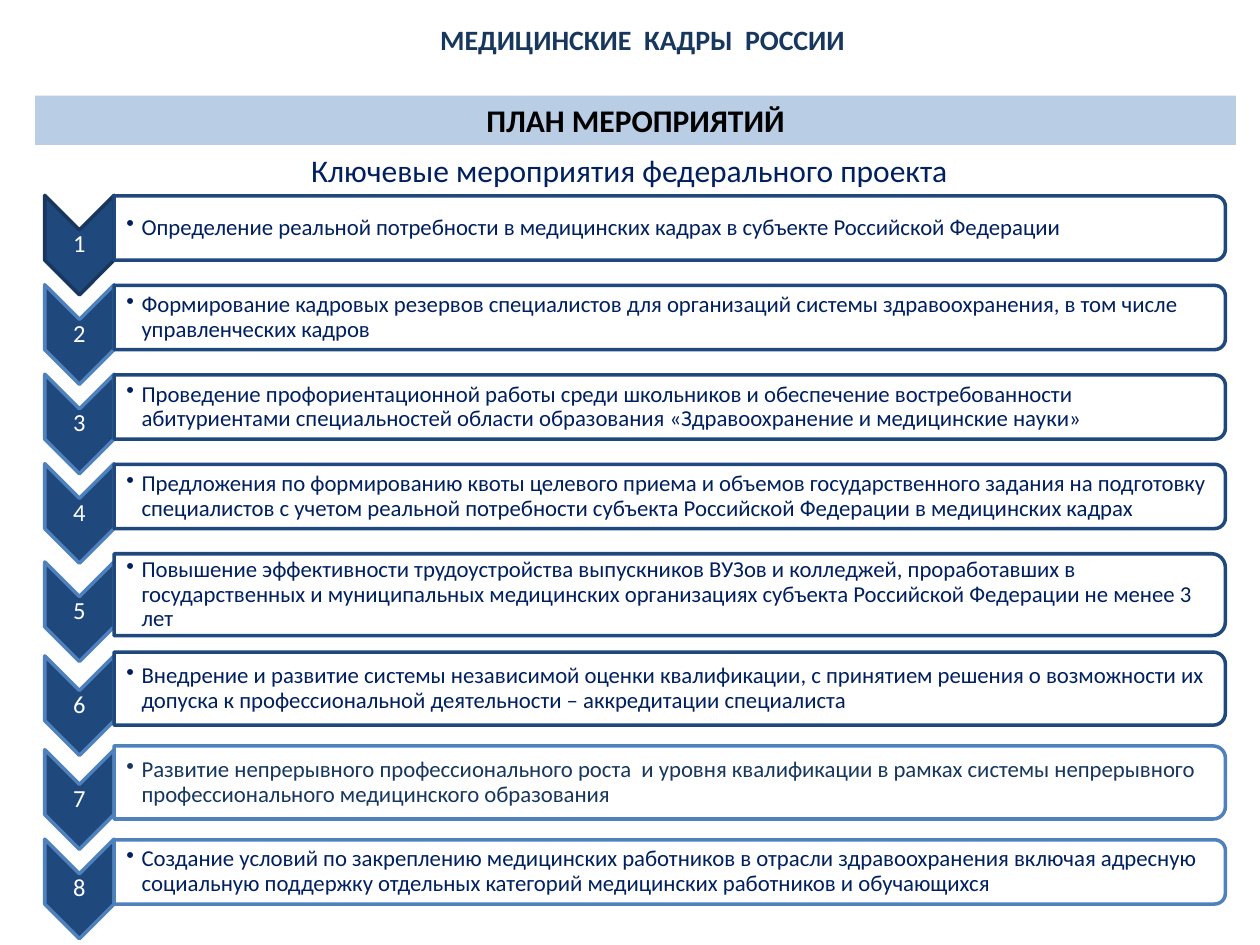
from dataclasses import dataclass

from lxml.etree import SubElement
from pptx import Presentation
from pptx.dml.color import RGBColor
from pptx.enum.shapes import MSO_SHAPE as Shape
from pptx.enum.text import MSO_ANCHOR as Anchor, PP_ALIGN as Align
from pptx.oxml.ns import qn
from pptx.util import Inches, Pt

SLIDE_WIDTH, SLIDE_HEIGHT = Inches(10), Inches(7.5)
COLUMNS, ROWS = 100, 75
NAVY, DARK, BLUE, INK = "1F497D", "17375E", "4F81BD", "002060"
BAND, WHITE, BLACK = "B9CDE5", "FFFFFF", "000000"

CHEVRON_LENGTH, CHEVRON_WIDTH = 7.9, 5.5
CHEVRON_DROP = 1.35
STEP_REACH = 4.55

STEPS = [
    ("Определение реальной потребности в медицинских кадрах в субъекте "
     "Российской Федерации", 5.1, DARK, NAVY, INK),
    ("Формирование кадровых резервов специалистов для организаций системы "
     "здравоохранения, в том числе управленческих кадров", 5.1, BLUE, NAVY, INK),
    ("Проведение профориентационной работы среди школьников и обеспечение "
     "востребованности абитуриентами специальностей области образования "
     "«Здравоохранение и медицинские науки»", 5.1, BLUE, NAVY, INK),
    ("Предложения по формированию квоты целевого приема и объемов "
     "государственного задания на подготовку специалистов с учетом реальной "
     "потребности субъекта Российской Федерации в медицинских кадрах",
     5.1, BLUE, NAVY, INK),
    ("Повышение эффективности трудоустройства выпускников ВУЗов и колледжей, "
     "проработавших в государственных и муниципальных медицинских организациях "
     "субъекта Российской Федерации не менее 3 лет", 6.5, BLUE, NAVY, INK),
    ("Внедрение и развитие системы независимой оценки квалификации, с принятием "
     "решения о возможности их допуска к профессиональной деятельности – "
     "аккредитации специалиста", 5.8, BLUE, NAVY, INK),
    ("Развитие непрерывного профессионального роста  и уровня квалификации в "
     "рамках системы непрерывного профессионального медицинского образования",
     5.8, BLUE, BLUE, DARK),
    ("Создание условий по закреплению медицинских работников в отрасли "
     "здравоохранения включая адресную социальную поддержку отдельных категорий "
     "медицинских работников и обучающихся", 5.1, BLUE, BLUE, INK),
]


@dataclass
class Box:
    left: float
    top: float
    width: float
    height: float

    def place(self):
        column, row = SLIDE_WIDTH / COLUMNS, SLIDE_HEIGHT / ROWS
        return (round(self.left * column), round(self.top * row),
                round(self.width * column), round(self.height * row))

    @property
    def center(self):
        return self.left + self.width / 2, self.top + self.height / 2


def centered(center, width, height):
    return Box(center[0] - width / 2, center[1] - height / 2, width, height)


def color(value):
    return RGBColor.from_string(value)


def add_shape(slide, kind, box, fill, line=None, rotation=0, opacity=None):
    shape = slide.shapes.add_shape(kind, *box.place())
    shape.shadow.inherit = False
    shape.rotation = rotation
    shape.fill.solid()
    shape.fill.fore_color.rgb = color(fill)
    if opacity is not None:
        fill_color = shape.element.spPr.find(f"{qn('a:solidFill')}/{qn('a:srgbClr')}")
        SubElement(fill_color, qn("a:alpha"), val=str(opacity * 1000))
    if line:
        shape.line.color.rgb = color(line)
        shape.line.width = Pt(2)
    else:
        shape.line.fill.background()
    return shape


def add_bullet(paragraph, indent):
    properties = paragraph._p.get_or_add_pPr()
    properties.set("marL", str(indent))
    properties.set("indent", str(-indent))
    SubElement(properties, qn("a:buChar"), char="•")


def add_text(slide, box, text, size, fill, bold=False, align=Align.CENTER,
             spacing=1.0, margins=(0.1, 0.05, 0.1, 0.05), wrap=True, bullet=False):
    frame = slide.shapes.add_textbox(*box.place()).text_frame
    frame.word_wrap = wrap
    frame.vertical_anchor = Anchor.MIDDLE
    (frame.margin_left, frame.margin_top,
     frame.margin_right, frame.margin_bottom) = map(Inches, margins)
    paragraph = frame.paragraphs[0]
    paragraph.alignment = align
    paragraph.line_spacing = spacing
    if bullet:
        add_bullet(paragraph, Inches(0.12))
    run = paragraph.add_run()
    run.text = text
    run.font.name = "Calibri"
    run.font.size = Pt(size)
    run.font.bold = bold
    run.font.color.rgb = color(fill)


def add_band(slide, box, text):
    add_shape(slide, Shape.RECTANGLE, box, BAND)
    add_text(slide, box, text, 18, BLACK, bold=True)


def add_chevron(slide, center, number, line):
    add_shape(slide, Shape.CHEVRON, centered(center, CHEVRON_LENGTH, CHEVRON_WIDTH),
              NAVY, line, rotation=90)
    add_text(slide, centered(center, CHEVRON_WIDTH, 2.4), str(number), 14, WHITE,
             spacing=0.9, margins=(0.01,) * 4)


def add_card(slide, box, text, line, ink):
    add_shape(slide, Shape.ROUND_2_SAME_RECTANGLE,
              centered(box.center, box.height, box.width), WHITE, line,
              rotation=90, opacity=90)
    text_box = Box(box.left, box.top + 0.25, box.width - 0.2, box.height - 0.5)
    add_text(slide, text_box, text, 13, ink, align=Align.LEFT, spacing=0.9,
             margins=(0.1, 0.01, 0.01, 0.01), bullet=True)


def add_steps(slide, box):
    top = box.top
    for number, (text, height, chevron_line, card_line, ink) in enumerate(STEPS, 1):
        middle = top + height / 2
        add_chevron(slide, (box.left + CHEVRON_WIDTH / 2, middle + CHEVRON_DROP),
                    number, chevron_line)
        card = Box(box.left + CHEVRON_WIDTH, top, box.width - CHEVRON_WIDTH, height)
        add_card(slide, card, text, card_line, ink)
        top = middle + STEP_REACH


def main():
    presentation = Presentation()
    presentation.slide_width, presentation.slide_height = SLIDE_WIDTH, SLIDE_HEIGHT
    slide = presentation.slides.add_slide(presentation.slide_layouts[6])
    add_text(slide, Box(7.1, 1.5, 87.8, 3.7), "МЕДИЦИНСКИЕ  КАДРЫ  РОССИИ", 16, DARK,
             bold=True, spacing=0.8)
    add_band(slide, Box(2.8, 7.6, 95.3, 3.9), "ПЛАН МЕРОПРИЯТИЙ")
    add_steps(slide, Box(3.55, 15.55, 93.7, 59))
    add_text(slide, Box(23.7, 11.5, 53.8, 4), "Ключевые мероприятия федерального проекта",
             18, INK, align=Align.LEFT, wrap=False)
    presentation.save("out.pptx")


if __name__ == "__main__":
    main()
